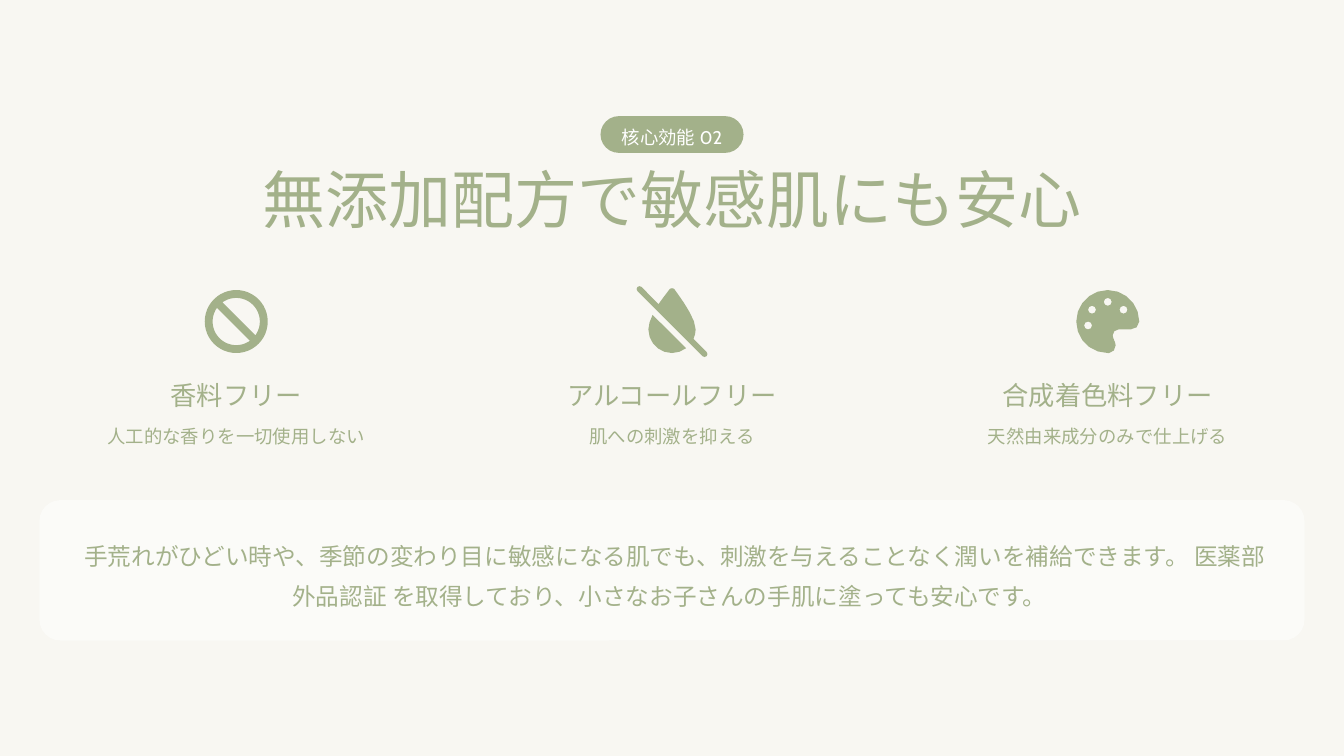
from math import cos, dist, pi, sin

from pptx import Presentation
from pptx.dml.color import RGBColor
from pptx.enum.shapes import MSO_SHAPE as Shape
from pptx.enum.text import MSO_ANCHOR as Anchor, PP_ALIGN as Align
from pptx.oxml.ns import qn
from pptx.util import Pt
from lxml.etree import SubElement

SAGE = RGBColor(0xA3, 0xB1, 0x8A)
CREAM = RGBColor(0xF8, 0xF7, 0xF2)
WHITE = RGBColor(0xFF, 0xFF, 0xFF)

ICON = 48
DROP = [
    [(3.84, -2.33), (2.96, -3.21, 1.54, -3.21, 0.66, -2.33),
     (-0.22, -1.45, -0.22, -0.03, 0.66, 0.85), (50.16, 50.35),
     (51.04, 51.23, 52.46, 51.23, 53.34, 50.35),
     (54.2, 49.5, 54.2, 48.05, 53.34, 47.17), (43.4, 37.2),
     (44.4, 35, 45, 32.5, 45, 30), (45, 20.9, 32.6, 4.8, 28.9, -0.5),
     (28.4, -1.1, 27.7, -1.4, 27, -1.4), (26.3, -1.4, 25.6, -1.1, 25.1, -0.5),
     (23.4, 1.7, 20, 6, 16.7, 10.8)],
    [(12.2, 18.9), (10.2, 23, 9, 26.9, 9, 30), (9, 39.9, 17.1, 48, 27, 48),
     (31, 48, 34.7, 46.6, 37.7, 44.3)],
]
BOARD = [
    (48, 24), (48, 27.7, 44.9, 30, 41.4, 30), (32.25, 30),
    (29.8, 30, 27.75, 32, 27.75, 34.5), (27.75, 35.8, 28.4, 37, 28.86, 38.2),
    (29.4, 39.5, 30, 40.8, 30, 42.2), (30, 45.1, 28, 47.8, 25, 48), (24, 48),
    (10.74, 48, 0, 37.26, 0, 24), (0, 10.74, 10.74, 0, 24, 0),
    (37.26, 0, 48, 10.74, 48, 24),
]
WELLS = [(9, 27), (12, 15), (24, 9), (36, 15)]


def paint(shape, color):
    """Give a shape a plain fill with no line or shadow."""
    shape.shadow.inherit = False
    shape.fill.solid()
    shape.fill.fore_color.rgb = color
    shape.line.fill.background()
    return shape


def add_block(slide, kind, box, color, adj):
    """Add a plain preset shape with one adjustment."""
    shape = paint(slide.shapes.add_shape(kind, *map(Pt, box)), color)
    shape.adjustments[0] = adj
    return shape


def add_text(slide, box, text, size, font, color=SAGE, gap=1.2):
    """Add a centred paragraph in a box without margins."""
    frame = slide.shapes.add_textbox(*map(Pt, box)).text_frame
    frame.word_wrap = True
    frame.vertical_anchor = Anchor.MIDDLE
    frame.margin_left = frame.margin_right = 0
    frame.margin_top = frame.margin_bottom = 0
    para = frame.paragraphs[0]
    para.text = text
    para.alignment = Align.CENTER
    para.line_spacing = gap
    para.font.size = Pt(size)
    para.font.name = font
    para.font.color.rgb = color


def trace(steps):
    """Turn lines and cubic curves into points, more on long curves."""
    points = [steps[0]]
    for step in steps[1:]:
        if len(step) == 2:
            points.append(step)
            continue
        knots = [points[-1], step[:2], step[2:4], step[4:]]
        count = 5 if dist(knots[0], knots[3]) > 12 else 2
        for i in range(1, count + 1):
            t = i / count
            mix = ((1 - t) ** 3, 3 * t * (1 - t) ** 2, 3 * t * t * (1 - t), t ** 3)
            points.append(tuple(sum(m * k[axis] for m, k in zip(mix, knots))
                                for axis in (0, 1)))
    return points


def ring(x, y, radius=3, count=8):
    """Return the points of a circle."""
    return [(x + radius * cos(2 * pi * i / count), y + radius * sin(2 * pi * i / count))
            for i in range(count)]


def add_outline(slide, left, top, loops):
    """Add closed outlines as one freeform."""
    loops = [[(x * 100, y * 100) for x, y in loop] for loop in loops]
    pen = slide.shapes.build_freeform(*loops[0][0], scale=Pt(1) / 100)
    for i, loop in enumerate(loops):
        if i:
            pen.move_to(*loop[0])
        pen.add_line_segments(loop[1:], close=True)
    paint(pen.convert_to_shape(Pt(left), Pt(top)), SAGE)


def draw_ban(slide, mid, top):
    """Draw the ban sign."""
    add_block(slide, Shape.NO_SYMBOL, (mid - ICON / 2, top, ICON, ICON), SAGE, 0.125)


def draw_drop(slide, mid, top):
    """Draw the crossed-out drop."""
    add_outline(slide, mid - 27, top, [trace(loop) for loop in DROP])


def draw_board(slide, mid, top):
    """Draw the paint palette with its wells."""
    add_outline(slide, mid - ICON / 2, top,
                [trace(BOARD)] + [ring(*well) for well in WELLS])


def add_head(slide, left, top, width):
    """Place the badge and the title."""
    wide, high = 109, 28
    badge = (left + (width - wide) / 2, top, wide, high)
    add_block(slide, Shape.ROUNDED_RECTANGLE, badge, SAGE, 0.5)
    add_text(slide, badge, "核心効能 02", 14, "Cabin", WHITE)
    add_text(slide, (left, top + 44, width, 48), "無添加配方で敏感肌にも安心",
             48, "Lato", gap=0.8)


def add_point(slide, left, top, width, draw, name, note):
    """Place an icon with its name and note."""
    draw(slide, left + width / 2, top)
    add_text(slide, (left, top + 63.5, width, 28), name, 20, "Karla")
    add_text(slide, (left, top + 99.5, width, 20), note, 14, "Cabin")


def add_panel(slide, left, top, width, height):
    """Place the half-clear panel with its summary."""
    panel = add_block(slide, Shape.ROUNDED_RECTANGLE, (left, top, width, height),
                      WHITE, 0.15)
    tint = panel.fill._xPr.find(qn("a:solidFill"))[0]
    SubElement(tint, qn("a:alpha"), val="50000")
    pad = 24
    box = (left + pad, top + pad, width - 2 * pad, height - 2 * pad)
    add_text(slide, box, " 手荒れがひどい時や、季節の変わり目に敏感になる肌でも、"
             "刺激を与えることなく潤いを補給できます。 医薬部外品認証 を取得しており、"
             "小さなお子さんの手肌に塗っても安心です。 ", 18, "Karla", gap=1.4)


def main():
    """Build and save the slide."""
    deck = Presentation()
    deck.slide_width, deck.slide_height = Pt(1024), Pt(576)
    slide = deck.slides.add_slide(deck.slide_layouts[6])
    slide.background.fill.solid()
    slide.background.fill.fore_color.rgb = CREAM

    add_head(slide, 10, 88.5, 1004)
    points = [
        (draw_ban, "香料フリー", "人工的な香りを一切使用しない"),
        (draw_drop, "アルコールフリー", "肌への刺激を抑える"),
        (draw_board, "合成着色料フリー", "天然由来成分のみで仕上げる"),
    ]
    for i, point in enumerate(points):
        add_point(slide, 10 + 332 * i, 221, 340, *point)
    add_panel(slide, 30, 381, 964, 107)
    deck.save("out.pptx")


if __name__ == "__main__":
    main()
